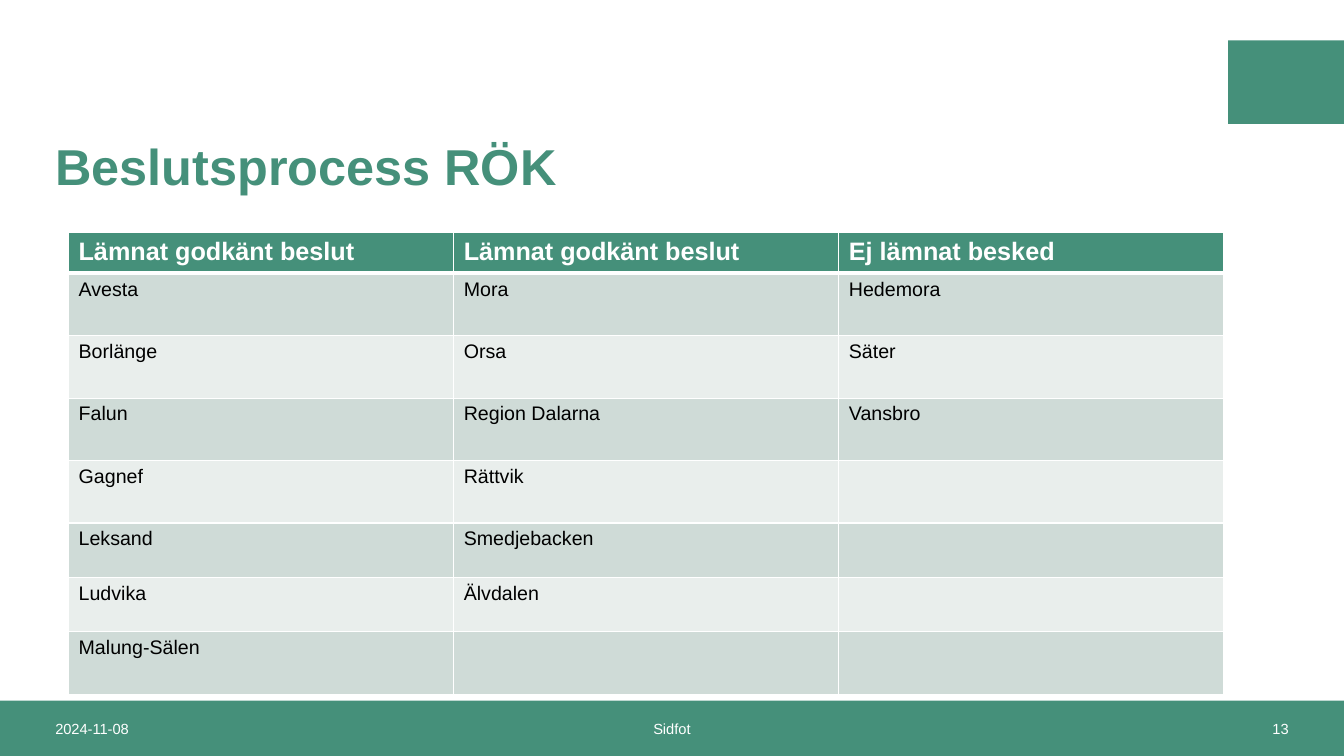
import lxml.etree
import pptx
import pptx.dml.color
import pptx.enum.shapes
import pptx.enum.text
import pptx.oxml.ns
import pptx.util

Inches = pptx.util.Inches
ALIGN = pptx.enum.text.PP_ALIGN
GREEN, WHITE, BLACK = "45907A", "FFFFFF", "000000"
BANDS = ["CFDBD7", "E9EEEC"]
PAGE_WIDTH, PAGE_HEIGHT = 13.33, 7.5

ROWS = [
    ["Lämnat godkänt beslut", "Lämnat godkänt beslut", "Ej lämnat besked"],
    ["Avesta", "Mora", "Hedemora"],
    ["Borlänge", "Orsa", "Säter"],
    ["Falun", "Region Dalarna", "Vansbro"],
    ["Gagnef", "Rättvik", ""],
    ["Leksand", "Smedjebacken", ""],
    ["Ludvika", "Älvdalen", ""],
    ["Malung-Sälen", "", ""],
]
ROW_HEIGHTS = [0.37, 0.62, 0.62, 0.62, 0.62, 0.54, 0.54, 0.62]


def color(code):
    return pptx.dml.color.RGBColor.from_string(code)


def add_span(para, text, size, code, bold=False):
    span = para.add_run()
    span.text = text
    span.font.name = "Arial"
    span.font.size = pptx.util.Pt(size)
    span.font.bold = bold
    span.font.color.rgb = color(code)


def add_block(page, left, top, width, height):
    """Add a plain green rectangle."""
    block = page.shapes.add_shape(
        pptx.enum.shapes.MSO_SHAPE.RECTANGLE,
        Inches(left), Inches(top), Inches(width), Inches(height))
    block.shadow.inherit = False
    block.fill.solid()
    block.fill.fore_color.rgb = color(GREEN)
    block.line.fill.background()


def add_text(page, left, top, width, height, text, size, code,
             align=ALIGN.LEFT, bold=False):
    """Add one vertically centred line of text and return its paragraph."""
    box = page.shapes.add_textbox(
        Inches(left), Inches(top), Inches(width), Inches(height))
    frame = box.text_frame
    frame.word_wrap = True
    frame.vertical_anchor = pptx.enum.text.MSO_ANCHOR.MIDDLE
    para = frame.paragraphs[0]
    para.alignment = align
    add_span(para, text, size, code, bold)
    return para


def add_title(page, left, top, width, height):
    para = add_text(page, left, top, width, height, "Beslutsprocess RÖK",
                    36, GREEN, bold=True)
    para.line_spacing = 0.9


def add_footer(page, left, top, width, height):
    add_block(page, left, top, width, height)
    margin, side, middle = 0.45, 3.47, 4.5
    parts = [
        (margin, side, "2024-11-08", ALIGN.LEFT),
        ((width - middle) / 2, middle, "Sidfot", ALIGN.CENTER),
        (width - margin - side, side, "13", ALIGN.RIGHT),
    ]
    for offset, part_width, text, align in parts:
        add_text(page, left + offset, top, part_width, height, text, 10.5,
                 WHITE, align)


def set_borders(cell, top, bottom):
    """Draw white cell edges; top and bottom are widths in points."""
    properties = cell._tc.get_or_add_tcPr()
    edges = [("lnL", 1), ("lnR", 1), ("lnT", top), ("lnB", bottom)]
    for place, (edge, points) in enumerate(edges):
        line = lxml.etree.Element(pptx.oxml.ns.qn("a:" + edge),
                                  w=str(pptx.util.Pt(points)))
        fill = lxml.etree.SubElement(line, pptx.oxml.ns.qn("a:solidFill"))
        lxml.etree.SubElement(fill, pptx.oxml.ns.qn("a:srgbClr"), val=WHITE)
        properties.insert(place, line)


def add_decision_table(page, left, top, width):
    table = page.shapes.add_table(
        len(ROWS), len(ROWS[0]), Inches(left), Inches(top),
        Inches(width), Inches(sum(ROW_HEIGHTS))).table
    for column in table.columns:
        column.width = Inches(width / len(ROWS[0]))
    for row_index, texts in enumerate(ROWS):
        table.rows[row_index].height = Inches(ROW_HEIGHTS[row_index])
        header = row_index == 0
        for column_index, text in enumerate(texts):
            cell = table.cell(row_index, column_index)
            cell.fill.solid()
            cell.fill.fore_color.rgb = color(
                GREEN if header else BANDS[(row_index - 1) % 2])
            set_borders(cell, 3 if row_index == 1 else 1, 3 if header else 1)
            if text:
                add_span(cell.text_frame.paragraphs[0], text,
                         18 if header else 14, WHITE if header else BLACK,
                         header)


def main():
    deck = pptx.Presentation()
    deck.slide_width = Inches(PAGE_WIDTH)
    deck.slide_height = Inches(PAGE_HEIGHT)
    page = deck.slides.add_slide(deck.slide_layouts[6])
    add_block(page, 12.18, 0.4, PAGE_WIDTH - 12.18, 0.83)
    add_footer(page, 0, 6.95, PAGE_WIDTH, 0.55)
    add_decision_table(page, 0.68, 2.31, 11.46)
    add_title(page, 0.45, 1.02, 11.39, 1.32)
    deck.save("out.pptx")


if __name__ == "__main__":
    main()
